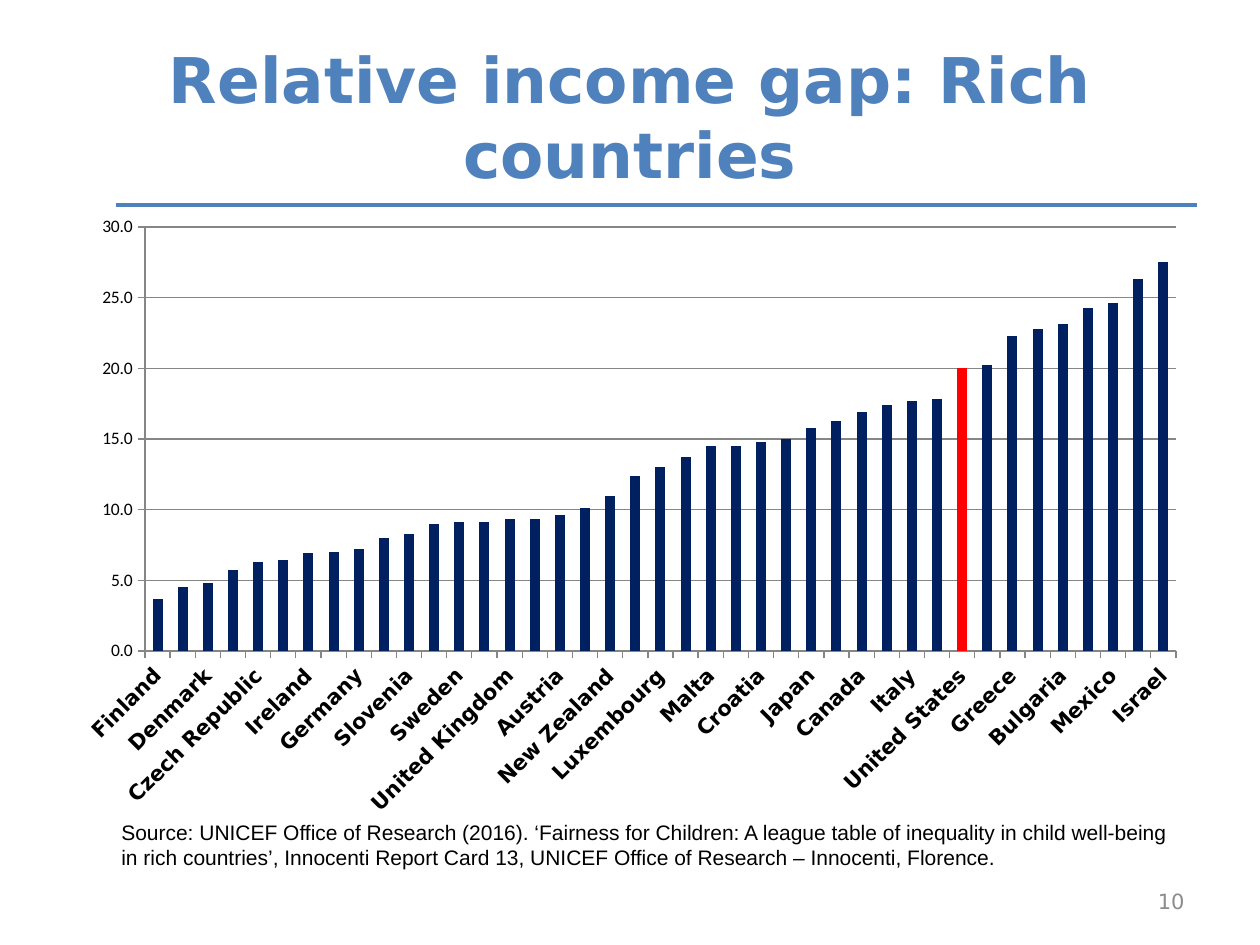
from lxml import etree
from pptx import Presentation
from pptx.chart.data import CategoryChartData
from pptx.dml.color import RGBColor
from pptx.enum.chart import XL_CHART_TYPE as ChartType, XL_TICK_MARK as TickMark
from pptx.enum.shapes import MSO_CONNECTOR as Connector
from pptx.enum.text import MSO_ANCHOR as Anchor, PP_ALIGN as Align
from pptx.oxml import parse_xml
from pptx.oxml.ns import nsdecls, qn
from pptx.util import Pt

EMU_PER_PX = 914400 / 126
BLUE, NAVY, RED, BLACK, GRAY = "4F81BD", "002060", "FF0000", "000000", "8C8C8C"
AXIS_GRAY = "868686"
HEADING_FONT = "DejaVu Sans"
HIGHLIGHT = "United States"

INCOME_GAPS = {
    "Finland": 3.7, "Norway": 4.5, "Denmark": 4.8, "Netherlands": 5.7,
    "Czech Republic": 6.3, "Iceland": 6.4, "Ireland": 6.9, "Switzerland": 7,
    "Germany": 7.2, "Republic of Korea": 8, "Slovenia": 8.3, "France": 9,
    "Sweden": 9.1, "Cyprus": 9.1, "United Kingdom": 9.3, "Australia": 9.3,
    "Austria": 9.6, "Belgium": 10.1, "New Zealand": 11, "Estonia": 12.4,
    "Luxembourg": 13, "Slovakia": 13.7, "Malta": 14.5, "Poland": 14.5,
    "Croatia": 14.8, "Hungary": 15, "Japan": 15.8, "Latvia": 16.3,
    "Canada": 16.9, "Portugal": 17.4, "Italy": 17.7, "Lithuania": 17.8,
    "United States": 20, "Spain": 20.2, "Greece": 22.3, "Turkey": 22.8,
    "Bulgaria": 23.1, "Romania": 24.3, "Mexico": 24.6, "Chile": 26.3,
    "Israel": 27.5,
}
SOURCE = (
    "Source: UNICEF Office of Research (2016). ‘Fairness for Children: "
    "A league table of inequality in child well-being in rich countries’, "
    "Innocenti Report Card 13, UNICEF Office of Research – Innocenti, Florence."
)


def px(length):
    return round(length * EMU_PER_PX)


def color(hex_code):
    return RGBColor.from_string(hex_code)


def set_font(font, name, size, hex_code, bold=False):
    font.name, font.size, font.bold = name, Pt(size), bold
    font.color.rgb = color(hex_code)


def fill_text(shape, text, font, size, hex_code, align, anchor, bold=False):
    frame = shape.text_frame
    frame.word_wrap = True
    frame.vertical_anchor = anchor
    frame.text = text
    paragraph = frame.paragraphs[0]
    paragraph.alignment = align
    set_font(paragraph.font, font, size, hex_code, bold)


def add_title(slide, text, box):
    title = slide.shapes.title
    title.left, title.top, title.width, title.height = map(px, box)
    fill_text(title, text, HEADING_FONT, 36, BLUE, Align.CENTER, Anchor.MIDDLE, True)


def add_text(slide, box, *style):
    fill_text(slide.shapes.add_textbox(*map(px, box)), *style)


def add_rule(slide, left, right, top):
    rule = slide.shapes.add_connector(
        Connector.STRAIGHT, px(left), px(top), px(right), px(top))
    rule.line.color.rgb = color(BLUE)
    rule.line.width = Pt(2.5)
    etree.SubElement(rule._element.spPr, qn("a:effectLst"))


def style_axis(axis, font, size, bold=False):
    axis.major_tick_mark = TickMark.OUTSIDE
    axis.minor_tick_mark = TickMark.NONE
    axis.format.line.color.rgb = color(AXIS_GRAY)
    set_font(axis.tick_labels.font, font, size, BLACK, bold)


def set_plot_layout(chart, chart_box, plot_box):
    """Place the plot, given in slide px, as fractions of the chart box."""
    left, top, width, height = chart_box
    x, y, w, h = plot_box
    fractions = {"x": (x - left) / width, "y": (y - top) / height,
                 "w": w / width, "h": h / height}
    plot_area = chart._chartSpace.chart.plotArea
    for old in plot_area.findall(qn("c:layout")):
        plot_area.remove(old)
    sizes = "".join(f'<c:{key} val="{value:.5f}"/>'
                    for key, value in fractions.items())
    plot_area.insert(0, parse_xml(
        f'<c:layout {nsdecls("c")}><c:manualLayout><c:layoutTarget val="inner"/>'
        f'<c:xMode val="edge"/><c:yMode val="edge"/>{sizes}'
        "</c:manualLayout></c:layout>"))


def add_column_chart(slide, values, box, plot_box):
    data = CategoryChartData(number_format="0.0")
    data.categories = list(values)
    data.add_series("Series 1", list(values.values()))
    chart = slide.shapes.add_chart(
        ChartType.COLUMN_CLUSTERED, *map(px, box), data).chart
    chart.has_legend = False
    chart.has_title = False
    set_font(chart.font, "Calibri", 10, BLACK)
    set_plot_layout(chart, box, plot_box)

    # Columns, with one country picked out
    plot = chart.plots[0]
    plot.vary_by_categories = False
    plot.gap_width = 150
    series = plot.series[0]
    series.format.fill.solid()
    series.format.fill.fore_color.rgb = color(NAVY)
    point_fill = series.points[list(values).index(HIGHLIGHT)].format.fill
    point_fill.solid()
    point_fill.fore_color.rgb = color(RED)

    # Value axis
    value_axis = chart.value_axis
    style_axis(value_axis, "Calibri", 10)
    value_axis.minimum_scale, value_axis.maximum_scale = 0, 30
    value_axis.major_unit = 5
    value_axis.tick_labels.number_format = "0.0"
    value_axis.tick_labels.number_format_is_linked = False
    value_axis.major_gridlines.format.line.color.rgb = color(AXIS_GRAY)

    # Category axis: slanted labels, every second one shown
    category_axis = chart.category_axis
    style_axis(category_axis, HEADING_FONT, 12, True)
    axis_element = category_axis._element
    axis_element.find(qn("c:txPr")).find(qn("a:bodyPr")).set("rot", "-2700000")
    skip = parse_xml(f'<c:tickLblSkip {nsdecls("c")} val="2"/>')
    axis_element.find(qn("c:noMultiLvlLbl")).addprevious(skip)


def main():
    presentation = Presentation()
    presentation.slide_width, presentation.slide_height = px(1260), px(945)
    slide = presentation.slides.add_slide(presentation.slide_layouts[5])

    # Heading, chart and rule
    add_title(slide, "Relative income gap: Rich countries", (63, 37, 1134, 158))
    add_column_chart(slide, INCOME_GAPS, (64, 205, 1134, 624),
                     (145, 227, 1031, 424))
    add_rule(slide, 116, 1197, 205)

    # Page number and source
    add_text(slide, (903, 876, 294, 50), "10", HEADING_FONT, 12, GRAY,
             Align.RIGHT, Anchor.MIDDLE)
    add_text(slide, (109, 813, 1084, 102), SOURCE, "Arial", 12, BLACK,
             Align.LEFT, Anchor.TOP)
    presentation.save("out.pptx")


if __name__ == "__main__":
    main()
